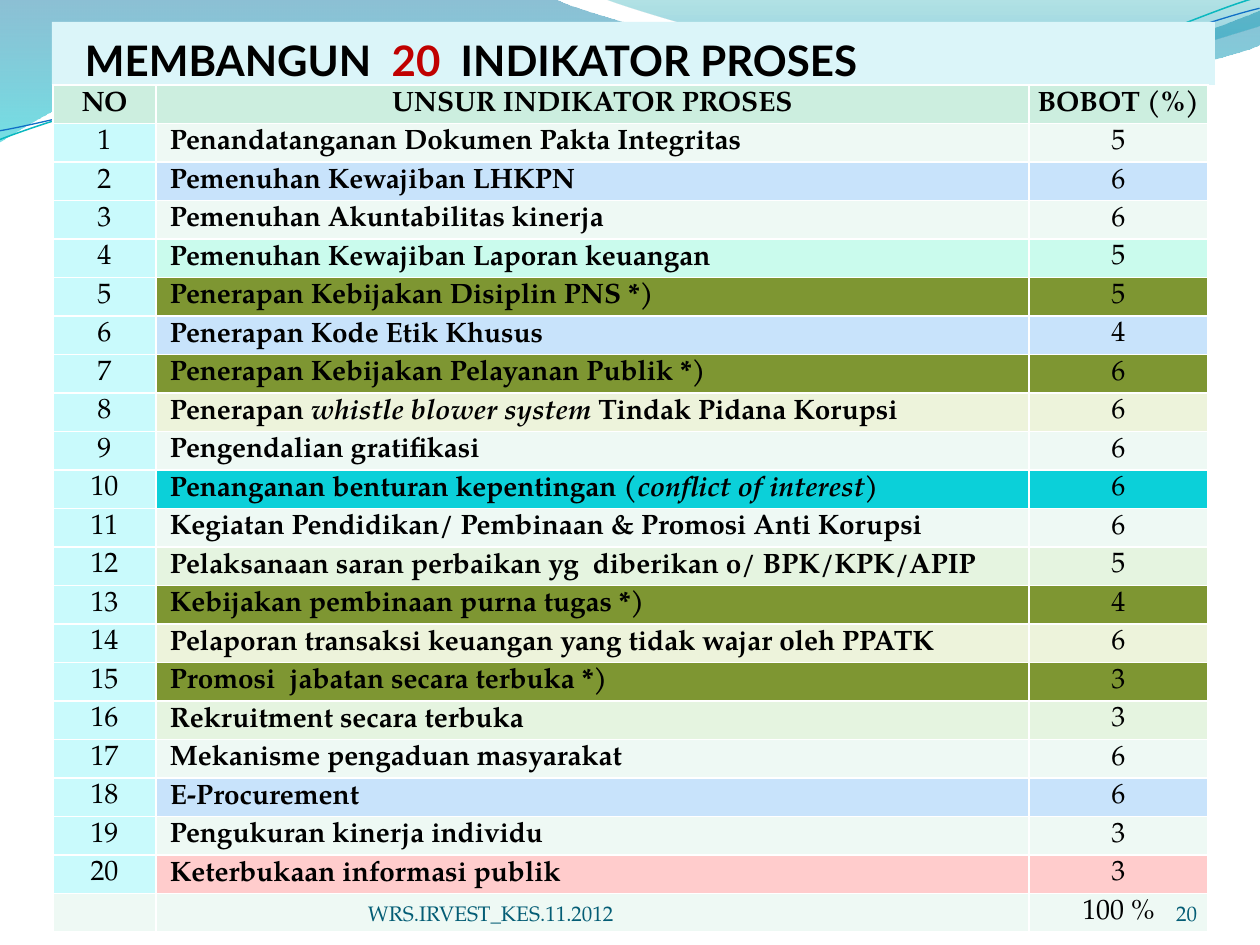
import dataclasses

import lxml.etree
import pptx
import pptx.dml.color
import pptx.enum.shapes
import pptx.enum.text
import pptx.oxml.ns
import pptx.util

PX = 914400 / 126
ALIGN = pptx.enum.text.PP_ALIGN
ANCHOR = pptx.enum.text.MSO_ANCHOR


@dataclasses.dataclass(frozen=True)
class Theme:
    serif: str = "TeX Gyre Pagella"
    sans: str = "Lato"
    title_size: int = 24
    table_size: int = 16
    footer_size: int = 12
    ink: str = "000000"
    accent: str = "C00000"
    footer: str = "045D75"
    title_fill: str = "DBF5F9"
    header: str = "CCEEDF"
    number: str = "C9FAFC"
    border: str = "FFFFFF"
    pale: str = "EEF9F4"
    blue: str = "C8E3FB"
    mint: str = "CAFBED"
    olive: str = "7E9632"
    cream: str = "EDF3DB"
    cyan: str = "0BD0D9"
    green: str = "E5F4E0"
    pink: str = "FFCCCC"
    teal_line: str = "0AB8BF"
    blue_line: str = "0F6FC6"
    broad_wave: tuple = ((0, "0074A1", 45), (1, "00C6CF", 55))
    right_wave: tuple = ((0, "00A1A9", 30), (0.8, "008BBF", 45))


THEME = Theme()

# Text between underscores is italic.
INDICATORS = [
    ("Penandatanganan Dokumen Pakta Integritas", 5, THEME.pale),
    ("Pemenuhan Kewajiban LHKPN", 6, THEME.blue),
    ("Pemenuhan Akuntabilitas kinerja", 6, THEME.pale),
    ("Pemenuhan Kewajiban Laporan keuangan", 5, THEME.mint),
    ("Penerapan Kebijakan Disiplin PNS *)", 5, THEME.olive),
    ("Penerapan Kode Etik Khusus", 4, THEME.blue),
    ("Penerapan Kebijakan Pelayanan Publik *)", 6, THEME.olive),
    ("Penerapan _whistle blower system_ Tindak Pidana Korupsi", 6, THEME.cream),
    ("Pengendalian gratifikasi", 6, THEME.pale),
    ("Penanganan benturan kepentingan (_conflict of interest_)", 6, THEME.cyan),
    ("Kegiatan Pendidikan/ Pembinaan & Promosi Anti Korupsi", 6, THEME.pale),
    ("Pelaksanaan saran perbaikan yg  diberikan o/ BPK/KPK/APIP", 5, THEME.green),
    ("Kebijakan pembinaan purna tugas *)", 4, THEME.olive),
    ("Pelaporan transaksi keuangan yang tidak wajar oleh PPATK", 6, THEME.cream),
    ("Promosi  jabatan secara terbuka *)", 3, THEME.olive),
    ("Rekruitment secara terbuka", 3, THEME.green),
    ("Mekanisme pengaduan masyarakat", 6, THEME.pale),
    ("E-Procurement", 6, THEME.blue),
    ("Pengukuran kinerja individu", 3, THEME.pale),
    ("Keterbukaan informasi publik", 3, THEME.pink),
]

# Each segment holds one point (straight) or three (cubic curve).
BROAD_WAVE = [
    [(554, -1)],
    [(600, 21), (837, 79), (955, 79)],
    [(1075, 79), (1207, 33), (1260, 11)],
    [(1261, 45)],
    [(1238, 55), (1096, 96), (940, 95)],
    [(784, 94), (481, 35), (324, 43)],
    [(163, 45), (58, 105), (-1, 142)],
]
RIGHT_WAVE = [
    [(641, 14), (859, 78), (969, 82)],
    [(1079, 87), (1211, 40), (1260, 26)],
    [(1260, 0)],
]
# The two lines are given level; they are tilted when drawn.
TEAL_LINE = [
    [(58, 90), (199, 52), (350, 53)],
    [(499, 53), (745, 117), (896, 114)],
    [(1049, 109), (1184, 45), (1260, 27)],
]
BLUE_LINE = [
    [(57, 94), (207, 57), (357, 58)],
    [(509, 58), (750, 112), (902, 108)],
    [(1052, 104), (1188, 52), (1262, 38)],
]


def px(n):
    return pptx.util.Emu(round(n * PX))


def rgb(color):
    return pptx.dml.color.RGBColor.from_string(color)


def set_fill(fill, color):
    fill.solid()
    fill.fore_color.rgb = rgb(color)


def set_font(font, name, size, color, bold=False):
    font.name, font.size, font.bold = name, pptx.util.Pt(size), bold
    font.color.rgb = rgb(color)


def set_indent(p, n):
    p._p.get_or_add_pPr().set("marL", str(px(n)))


def add_path(slide, start, segments, close):
    """Build the outline through all points, then turn each triple into one curve."""
    builder = slide.shapes.build_freeform(px(start[0]), px(start[1]), scale=1.0)
    points = [(px(x), px(y)) for segment in segments for x, y in segment]
    builder.add_line_segments(points, close=close)
    sp = builder.convert_to_shape()
    sp.shadow.inherit = False
    lines = iter(list(sp._element.spPr.iter(pptx.oxml.ns.qn("a:lnTo"))))
    for segment in segments:
        nodes = [next(lines) for _ in segment]
        if len(nodes) == 3:
            curve = lxml.etree.Element(pptx.oxml.ns.qn("a:cubicBezTo"))
            nodes[0].addprevious(curve)
            for node in nodes:
                curve.append(node[0])
                node.getparent().remove(node)
    return sp


def add_wave(slide, start, segments, stops):
    """Add a closed shape; stops are (position, colour, opacity percent)."""
    sp = add_path(slide, start, segments, True)
    sp.line.fill.background()
    sp.fill.gradient()
    sp.fill.gradient_angle = 270
    for stop, (position, color, _) in zip(sp.fill.gradient_stops, stops):
        stop.position = position
        stop.color.rgb = rgb(color)
    for node, (_, _, opacity) in zip(sp._element.spPr.iter(pptx.oxml.ns.qn("a:srgbClr")), stops):
        lxml.etree.SubElement(node, pptx.oxml.ns.qn("a:alpha"), val=str(opacity * 1000))


def add_curve(slide, start, segments, color, width):
    sp = add_path(slide, start, segments, False)
    sp.rotation = 357.3
    sp.fill.background()
    sp.line.color.rgb = rgb(color)
    sp.line.width = pptx.util.Pt(width)


def add_title(slide):
    sp = slide.shapes.add_shape(pptx.enum.shapes.MSO_SHAPE.RECTANGLE, px(52), px(22), px(1163), px(63))
    sp.shadow.inherit = False
    set_fill(sp.fill, THEME.title_fill)
    sp.line.fill.background()
    tf = sp.text_frame
    tf.vertical_anchor = ANCHOR.TOP
    tf.margin_left = tf.margin_right = tf.margin_top = px(13)
    tf.margin_bottom = px(6)
    p = tf.paragraphs[0]
    p.alignment = ALIGN.LEFT
    set_indent(p, 20)
    set_font(p.font, THEME.sans, THEME.title_size, THEME.ink, True)
    for text, color in (("MEMBANGUN  ", THEME.ink), ("20 ", THEME.accent), (" INDIKATOR PROSES", THEME.ink)):
        r = p.add_run()
        r.text = text
        r.font.color.rgb = rgb(color)


def set_borders(cell):
    tc_pr = cell._tc.get_or_add_tcPr()
    for side in ("lnL", "lnR", "lnT", "lnB"):
        ln = lxml.etree.SubElement(tc_pr, pptx.oxml.ns.qn(f"a:{side}"), w=str(pptx.util.Pt(1)))
        fill = lxml.etree.SubElement(ln, pptx.oxml.ns.qn("a:solidFill"))
        lxml.etree.SubElement(fill, pptx.oxml.ns.qn("a:srgbClr"), val=THEME.border)


def fill_cell(cell, text, color, bold=False, indent=0):
    set_borders(cell)
    set_fill(cell.fill, color)
    cell.vertical_anchor = ANCHOR.MIDDLE
    cell.margin_left = cell.margin_right = cell.margin_top = px(1)
    cell.margin_bottom = 0
    p = cell.text_frame.paragraphs[0]
    p.alignment = ALIGN.LEFT if indent else ALIGN.CENTER
    set_indent(p, indent)
    set_font(p.font, THEME.serif, THEME.table_size, THEME.ink, bold)
    for i, part in enumerate(text.split("_")):
        if part:
            r = p.add_run()
            r.text = part
            if i % 2:
                r.font.italic = True


def add_indicator_table(slide):
    widths = (103, 873, 179)
    count = len(INDICATORS) + 2
    table = slide.shapes.add_table(count, 3, px(53), px(85), px(sum(widths)), px(847)).table
    table.first_row = table.horz_banding = False
    for column, width in zip(table.columns, widths):
        column.width = px(width)
    for row in table.rows:
        row.height = px(847 / count)
    for j, text in enumerate(("NO", "UNSUR INDIKATOR PROSES", "BOBOT (%)")):
        fill_cell(table.cell(0, j), text, THEME.header, bold=True)
    for i, (name, weight, color) in enumerate(INDICATORS, 1):
        fill_cell(table.cell(i, 0), str(i), THEME.number)
        fill_cell(table.cell(i, 1), name, color, bold=True, indent=13)
        fill_cell(table.cell(i, 2), str(weight), color)
    for j, text in enumerate(("", "", "100 %")):
        fill_cell(table.cell(count - 1, j), text, THEME.pale)


def add_footer(slide, text, left, width, align):
    tf = slide.shapes.add_textbox(px(left), px(876), px(width), px(50)).text_frame
    tf.word_wrap = True
    tf.vertical_anchor = ANCHOR.BOTTOM
    tf.margin_left = tf.margin_right = tf.margin_top = tf.margin_bottom = 0
    p = tf.paragraphs[0]
    p.text = text
    p.alignment = align
    set_font(p.font, THEME.serif, THEME.footer_size, THEME.footer)


def main():
    prs = pptx.Presentation()
    prs.slide_width, prs.slide_height = px(1260), px(945)
    slide = prs.slides.add_slide(prs.slide_layouts[6])
    add_wave(slide, (0, 0), BROAD_WAVE, THEME.broad_wave)
    add_wave(slide, (604, -1), RIGHT_WAVE, THEME.right_wave)
    add_curve(slide, (-3, 110), TEAL_LINE, THEME.teal_line, 0.85)
    add_curve(slide, (-2, 101), BLUE_LINE, THEME.blue_line, 0.75)
    add_title(slide)
    add_indicator_table(slide)
    add_footer(slide, "WRS.IRVEST_KES.11.2012", 368, 462, ALIGN.LEFT)
    add_footer(slide, "20", 1092, 105, ALIGN.RIGHT)
    prs.save("out.pptx")


if __name__ == "__main__":
    main()
